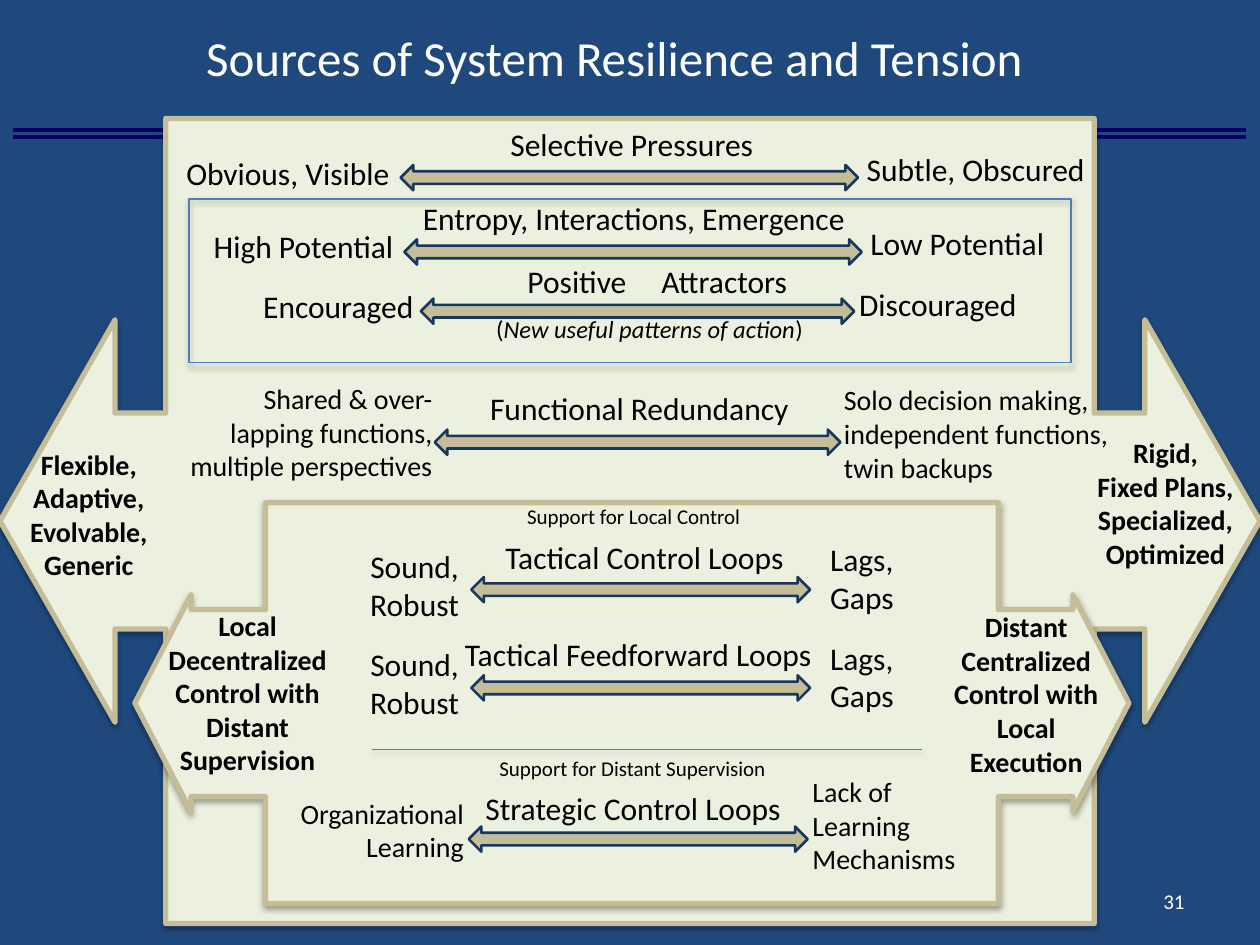
import lxml.etree
import pptx
import pptx.dml.color
import pptx.enum.shapes
import pptx.enum.text
import pptx.oxml.ns
import pptx.util

PX = 9144  # EMU in one px, at 100 px to the inch
COLORS = {
    "background": "1F497D", "rule": "000066", "panel": "EBF1DE", "tan": "C4BD97",
    "navy": "17375E", "frame": "4B7EBC", "divider": "4F81BD",
    "black": "000000", "white": "FFFFFF",
}
SHAPE = pptx.enum.shapes.MSO_SHAPE
ALIGN = pptx.enum.text.PP_ALIGN
ANCHOR = pptx.enum.text.MSO_ANCHOR
LEFT, CENTER, RIGHT = ALIGN.LEFT, ALIGN.CENTER, ALIGN.RIGHT


def px(*lengths):
    return [pptx.util.Emu(length * PX) for length in lengths]


def color(name):
    return pptx.dml.color.RGBColor.from_string(COLORS[name])


class SlideBuilder:
    font = "Calibri"

    def __init__(self, slide):
        self.slide = slide
        slide.background.fill.solid()
        slide.background.fill.fore_color.rgb = color("background")

    def fill_text(self, frame, paragraphs, size, align, ink="black", bold=False):
        """Each paragraph is a string or a list of (text, italic) runs."""
        frame.word_wrap = True
        for index, content in enumerate(paragraphs):
            paragraph = frame.paragraphs[0] if index == 0 else frame.add_paragraph()
            paragraph.alignment = align
            runs = [(content, False)] if isinstance(content, str) else content
            for text, italic in runs:
                run = paragraph.add_run()
                run.text = text
                run.font.name = self.font
                run.font.size = pptx.util.Pt(size)
                run.font.bold = bold
                run.font.italic = italic
                run.font.color.rgb = color(ink)

    def title(self, box, text):
        title = self.slide.shapes.title
        title.left, title.top, title.width, title.height = px(*box)
        frame = title.text_frame
        frame.vertical_anchor = ANCHOR.MIDDLE
        self.fill_text(frame, [text], 28, CENTER, "white")
        frame.paragraphs[0].line_spacing = 0.9

    def text(self, box, paragraphs, size=18, align=CENTER, anchor=ANCHOR.TOP, **style):
        frame = self.slide.shapes.add_textbox(*px(*box)).text_frame
        frame.vertical_anchor = anchor
        self.fill_text(frame, paragraphs, size, align, **style)

    def effects(self, shape, shadow_alpha):
        """Replace the theme shadow by a soft one straight below, or by none."""
        qn = pptx.oxml.ns.qn
        child = lxml.etree.SubElement
        effects = child(shape.element.spPr, qn("a:effectLst"))
        if shadow_alpha:
            shadow = child(effects, qn("a:outerShdw"), blurRad="40000", dist="23000",
                           dir="5400000", rotWithShape="0")
            ink = child(shadow, qn("a:srgbClr"), val=COLORS["black"])
            child(ink, qn("a:alpha"), val=str(shadow_alpha * 1000))

    def shape(self, kind, box, fill, line, width, adjustments=(), shadow_alpha=0):
        shape = self.slide.shapes.add_shape(kind, *px(*box))
        for index, value in enumerate(adjustments):
            shape.adjustments[index] = value
        if fill:
            shape.fill.solid()
            shape.fill.fore_color.rgb = color(fill)
        else:
            shape.fill.background()
        shape.line.color.rgb = color(line)
        shape.line.width = pptx.util.Pt(width)
        self.effects(shape, shadow_alpha)

    def callout(self, box, adjustments):
        self.shape(SHAPE.LEFT_RIGHT_ARROW_CALLOUT, box, "panel", "tan", 3, adjustments, 35)

    def arrow(self, left, top, width):
        self.shape(SHAPE.LEFT_RIGHT_ARROW, (left, top, width, 20), "tan", "navy", 1.5)

    def rule(self, left, right, y, line, width, shadow_alpha=0):
        connector = self.slide.shapes.add_connector(
            pptx.enum.shapes.MSO_CONNECTOR.STRAIGHT, *px(left, y, right, y))
        connector.line.color.rgb = color(line)
        connector.line.width = pptx.util.Pt(width)
        self.effects(connector, shadow_alpha)

    def spectrum(self, arrow, heading, low, high, size=18):
        """A double arrow with its heading and the labels of its two ends."""
        self.arrow(*arrow)
        if heading:
            self.text(*heading)
        self.text(*low, size=size, align=RIGHT)
        self.text(*high, size=size, align=LEFT)


# Spectra: arrow, heading, low end, high end, size of the end labels
OUTER_SPECTRA = [
    ((318, 131, 363), ((345, 94, 313, 44), ["Selective Pressures"]),
     ((135, 117, 184, 44), ["Obvious, Visible"]),
     ((678, 114, 218, 44), ["Subtle, Obscured"]), 18),
    ((321, 190, 363), ((322, 153, 362, 44), ["Entropy, Interactions, Emergence"]),
     ((138, 175, 184, 44), ["High Potential"]),
     ((681, 173, 218, 44), ["Low Potential"]), 18),
    ((334, 237, 344), None,
     ((154, 223, 184, 44), ["Encouraged"]),
     ((672, 221, 218, 44), ["Discouraged"]), 18),
    ((345, 341, 322), ((351, 304, 313, 44), ["Functional Redundancy"]),
     ((119, 298, 234, 99), ["Shared & over-", "lapping functions, multiple perspectives"]),
     ((660, 299, 236, 99),
      ["Solo decision making, independent functions, twin backups"]), 16),
]
INNER_SPECTRA = [
    ((374, 458, 269), ((355, 422, 313, 44), ["Tactical Control Loops"]),
     ((265, 429, 109, 77), ["Sound,", "Robust"]),
     ((649, 424, 94, 77), ["Lags,", "Gaps"]), 18),
    ((374, 536, 269), ((350, 499, 313, 44), ["Tactical Feedforward Loops"]),
     ((252, 507, 122, 77), ["Sound,", "Robust"]),
     ((649, 502, 103, 77), ["Lags,", "Gaps"]), 18),
    ((372, 656, 269), ((346, 621, 313, 44), ["Strategic Control Loops"]),
     ((224, 627, 154, 70), ["Organizational Learning"]),
     ((635, 610, 150, 99), ["Lack of Learning Mechanisms"]), 16),
]


def main():
    presentation = pptx.Presentation()
    presentation.slide_width, presentation.slide_height = px(1000, 750)
    builder = SlideBuilder(presentation.slides.add_slide(presentation.slide_layouts[5]))

    # Title, header rules and page number
    builder.title((25, 2, 925, 92), "Sources of System Resilience and Tension")
    for y in (103, 109):
        builder.rule(10, 989, y, "rule", 2.25)

    # Outer callout
    builder.callout((0, 94, 1000, 639), (0.268, 0.25, 0.143, 0.737))
    builder.text((717, 695, 233, 40), ["31"], 12, RIGHT, ANCHOR.MIDDLE, ink="white")
    builder.text((-18, 350, 177, 129), ["Flexible,", "Adaptive, Evolvable, Generic"],
                 16, bold=True)
    builder.text((845, 341, 160, 129), ["Rigid,", "Fixed Plans, Specialized, Optimized"],
                 16, bold=True)
    for spectrum in OUTER_SPECTRA:
        builder.spectrum(*spectrum)

    # Attractor heading in two parts, its note, and the frame
    builder.text((387, 203, 120, 44), ["Positive"], align=RIGHT)
    builder.text((515, 203, 130, 44), ["Attractors"], align=LEFT)
    builder.text((359, 244, 313, 37),
                 [[("(", False), ("New useful patterns of action", True), (")", False)]], 14)
    builder.shape(SHAPE.RECTANGLE, (150, 158, 700, 130), None, "frame", 0.75,
                  shadow_alpha=35)

    # Inner callout
    builder.callout((107, 399, 789, 318), (0.467, 0.27, 0.14, 0.737))
    builder.text((106, 478, 181, 158),
                 ["Local Decentralized Control with Distant Supervision"], 16, bold=True)
    builder.text((741, 479, 147, 158),
                 ["Distant Centralized", "Control with Local Execution"], 16, bold=True)
    for spectrum in INNER_SPECTRA:
        builder.spectrum(*spectrum)

    # Section captions and divider
    builder.text((400, 395, 206, 33), ["Support for Local Control"], 12)
    builder.text((385, 595, 234, 33), ["Support for Distant Supervision"], 12)
    builder.rule(295, 732, 595, "divider", 0.25, shadow_alpha=38)

    presentation.save("out.pptx")


if __name__ == "__main__":
    main()
